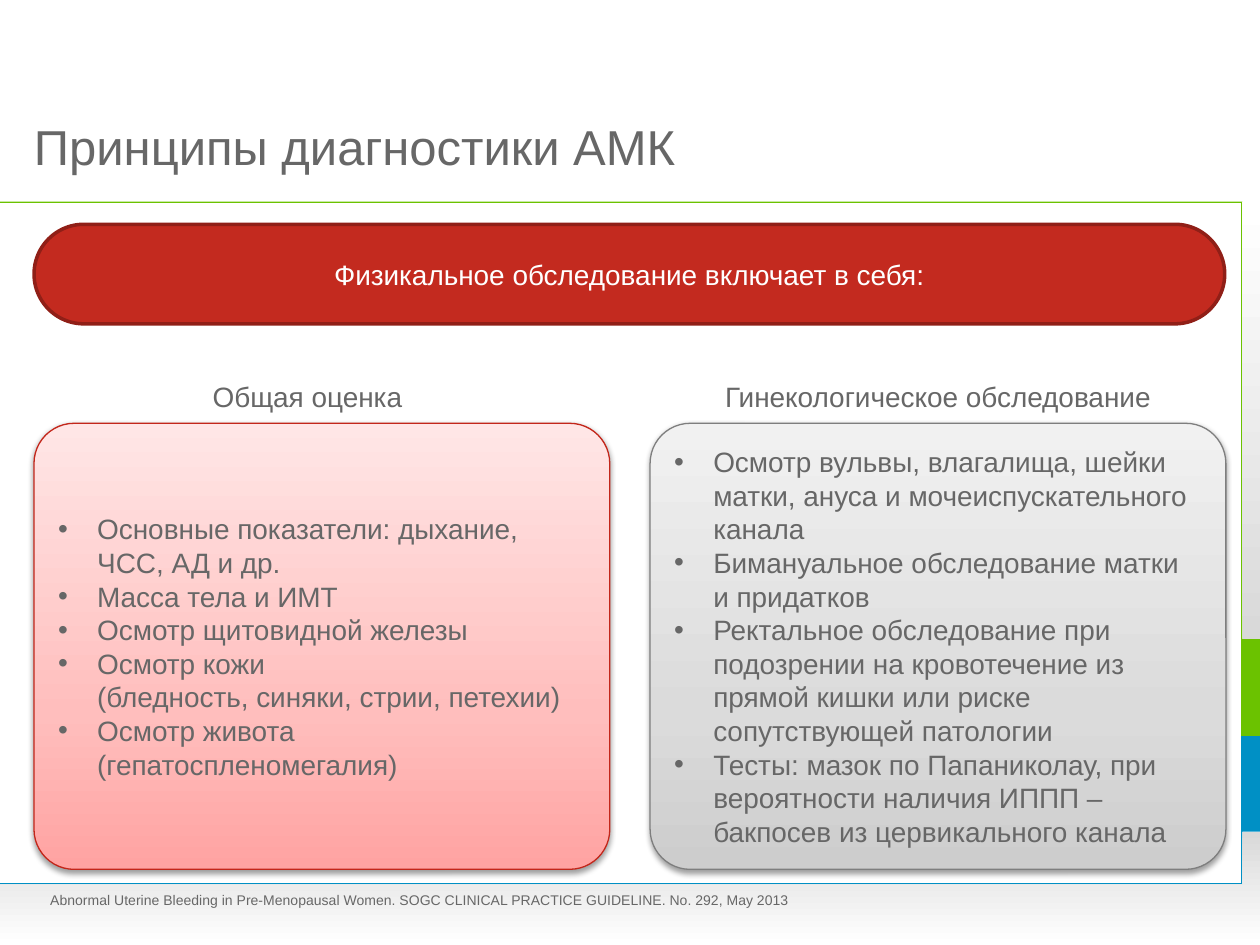
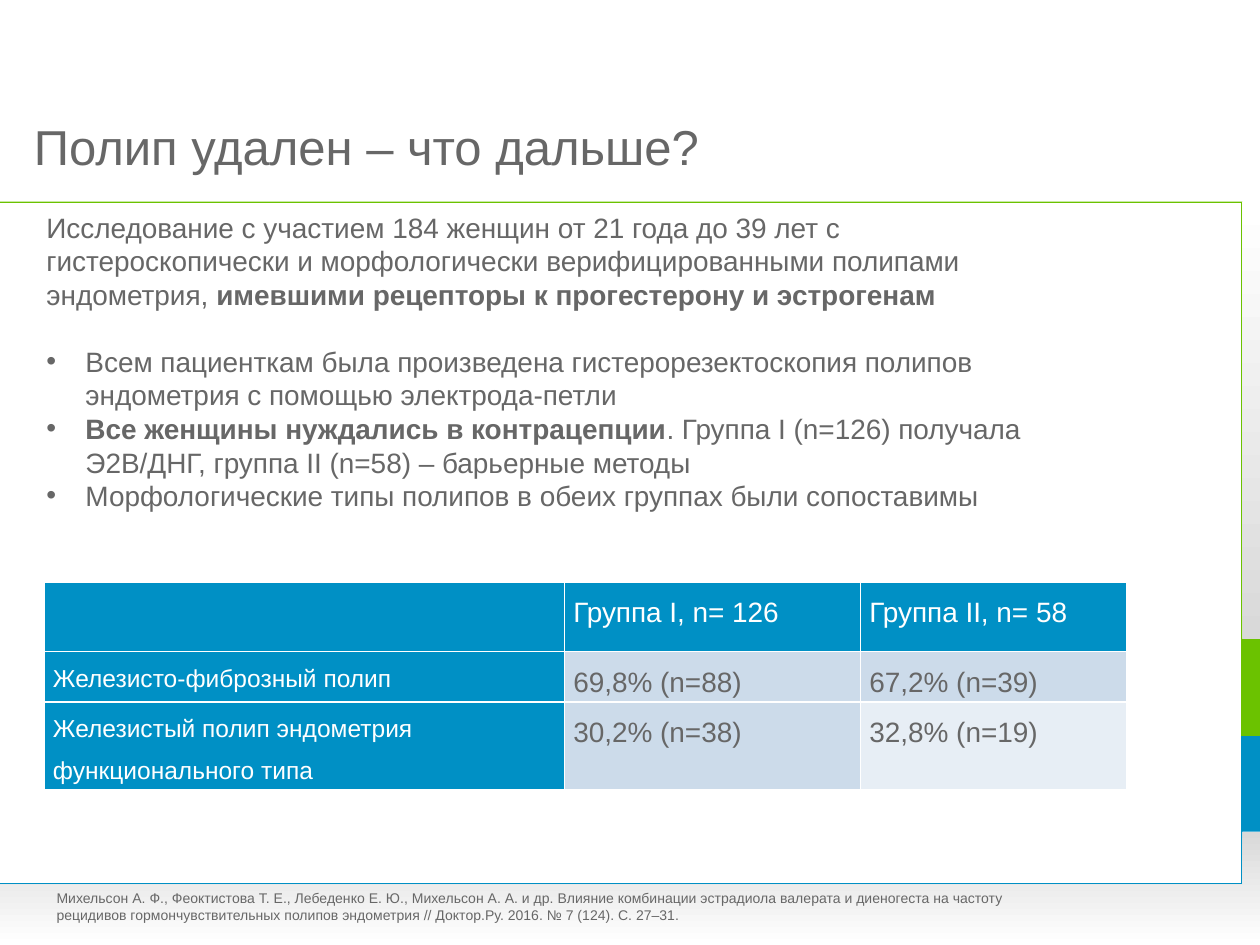
from lxml import etree
from pptx import Presentation
from pptx import util as u
from pptx.dml.color import RGBColor
from pptx.enum import shapes, text
from pptx.oxml import parse_xml
from pptx.oxml.ns import nsdecls, qn

# Content
FINDINGS = {
    "title": "Принципы диагностики АМК",
    "banner": "Физикальное обследование включает в себя:",
    "source": "Abnormal Uterine Bleeding in Pre-Menopausal Women. "
              "SOGC CLINICAL PRACTICE GUIDELINE. No. 292, May 2013",
    "cards": [
        {"caption": "Общая оценка", "caption_box": (67, 296, 354, 37),
         "fill": "red_card", "line": "red_edge", "corner": 0.09,
         "points": ["Основные показатели: дыхание, ЧСС, АД и др.",
                    "Масса тела и ИМТ",
                    "Осмотр щитовидной железы",
                    "Осмотр кожи\n(бледность, синяки, стрии, петехии)",
                    "Осмотр живота (гепатоспленомегалия)"]},
        {"caption": "Гинекологическое обследование", "caption_box": (524, 296, 441, 37),
         "fill": "gray_card", "line": "gray_edge", "corner": 0.09,
         "points": ["Осмотр вульвы, влагалища, шейки матки, ануса и мочеиспускательного канала",
                    "Бимануальное обследование матки и придатков",
                    "Ректальное обследование при подозрении на кровотечение из прямой кишки "
                    "или риске сопутствующей патологии",
                    "Тесты: мазок по Папаниколау, при вероятности наличия ИППП – "
                    "бакпосев из цервикального канала"]},
    ],
}
# Text between ** marks is bold
POLYP = {
    "title": "Полип удален – что дальше?",
    "intro": "Исследование с участием 184 женщин от 21 года до 39 лет с гистероскопически "
             "и морфологически верифицированными полипами эндометрия, "
             "**имевшими рецепторы к прогестерону и эстрогенам**",
    "points": ["Всем пациенткам была произведена гистерорезектоскопия полипов эндометрия "
               "с помощью электрода-петли",
               "**Все женщины нуждались в контрацепции**. Группа I (n=126) получала Э2В/ДНГ, "
               "группа II (n=58) – барьерные методы",
               "Морфологические типы полипов в обеих группах были сопоставимы"],
    "table": [["", "Группа I, n= 126", "Группа II, n= 58"],
              ["Железисто-фиброзный полип", "69,8% (n=88)", "67,2% (n=39)"],
              ["Железистый полип эндометрия функционального типа", "30,2% (n=38)", "32,8% (n=19)"]],
    "source": "Михельсон А. Ф., Феоктистова Т. Е., Лебеденко Е. Ю., Михельсон А. А. и др. "
              "Влияние комбинации эстрадиола валерата и диеногеста на частоту рецидивов "
              "гормончувствительных полипов эндометрия // Доктор.Ру. 2016. № 7 (124). С. 27–31.",
}

# Style
PX = 9144  # 100 px to the inch
FONT = "Arial"
COLORS = {"text": "676767", "white": "FFFFFF", "blue": "0090C5", "green": "6BC200",
          "banner": "C32A1F", "banner_edge": "901F17", "red_edge": "C3261A",
          "gray_edge": "7E7E7E", "cell": "CCDBEA", "cell_light": "E7EEF5"}
GRADIENTS = {"frame": [(0, "D9D9D9"), (100, "FFFFFF")],
             "red_card": [(0, "FFA3A2"), (35, "FFBEBD"), (100, "FFE6E6")],
             "gray_card": [(0, "CDCDCD"), (35, "DBDBDB"), (100, "F1F1F1")]}
INDENT = 31

# Slide frame: right edge strip and bottom band
BLUE_EDGE = [(1000, 583), (985, 583), (985, 701), (0, 701), (0, 702),
             (986, 702), (986, 660), (1000, 660)]
BOTTOM_BAND = [(1000, 750), (1000, 660), (986, 660), (986, 702), (0, 702), (0, 750)]
GREEN_EDGE = [(986, 507), (986, 160), (0, 160), (0, 161), (985, 161),
              (985, 584), (1000, 584), (1000, 507)]


def px(*values):
    return [v * PX for v in values]


def rgb(name):
    return RGBColor.from_string(COLORS[name])


def paint(sp, fill, line=None, width=0.75):
    sp.shadow.inherit = False
    sp.fill.solid()
    sp.fill.fore_color.rgb = rgb(fill)
    if line:
        sp.line.color.rgb = rgb(line)
        sp.line.width = u.Pt(width)
    else:
        sp.line.fill.background()


def paint_gradient(sp, name, angle):
    stops = "".join(f'<a:gs pos="{pos * 1000}"><a:srgbClr val="{c}"/></a:gs>'
                    for pos, c in GRADIENTS[name])
    grad = parse_xml(f'<a:gradFill {nsdecls("a")} rotWithShape="1"><a:gsLst>{stops}</a:gsLst>'
                     f'<a:lin ang="{angle * 60000}" scaled="0"/></a:gradFill>')
    props = sp._element.spPr
    props.replace(props.find(qn("a:solidFill")), grad)


def add_soft_shadow(sp):
    effects = sp._element.spPr.find(qn("a:effectLst"))
    effects.append(parse_xml(
        f'<a:outerShdw {nsdecls("a")} blurRad="{u.Pt(3.1)}" dist="{u.Pt(1.6)}" dir="5400000" '
        'rotWithShape="0"><a:srgbClr val="000000"><a:alpha val="38000"/></a:srgbClr></a:outerShdw>'))


def write(p, content, size=16, color="text", align=text.PP_ALIGN.LEFT, bullet=False):
    if bullet:
        props = p._p.get_or_add_pPr()
        props.set("marL", str(INDENT * PX))
        props.set("indent", str(-INDENT * PX))
        etree.SubElement(props, qn("a:buFont")).set("typeface", FONT)
        etree.SubElement(props, qn("a:buChar")).set("char", "•")
    p.alignment = align
    for i, part in enumerate(content.split("**")):
        for j, line in enumerate(part.split("\n")):
            if j:
                p.add_line_break()
            if line:
                r = p.add_run()
                r.text = line
                r.font.bold = i % 2 == 1
                r.font.name = FONT
                r.font.size = u.Pt(size)
                r.font.color.rgb = rgb(color)


def write_list(tf, items, **style):
    for i, item in enumerate(items):
        write(tf.add_paragraph() if i else tf.paragraphs[0], item, **style)


def add_text(slide, box, content, **style):
    tf = slide.shapes.add_textbox(*px(*box)).text_frame
    tf.word_wrap = True
    write(tf.paragraphs[0], content, **style)
    return tf


def add_outline(slide, points, fill):
    builder = slide.shapes.build_freeform(*points[0], scale=PX)
    builder.add_line_segments(points[1:], close=True)
    sp = builder.convert_to_shape()
    paint(sp, fill)
    return sp


def add_rounded(slide, box, corner, fill, line, width=0.75):
    sp = slide.shapes.add_shape(shapes.MSO_SHAPE.ROUNDED_RECTANGLE, *px(*box))
    sp.adjustments[0] = corner
    paint(sp, fill, line, width)
    sp.text_frame.word_wrap = True
    sp.text_frame.vertical_anchor = text.MSO_ANCHOR.MIDDLE
    return sp


def new_slide(prs, data, source_box):
    slide = prs.slides.add_slide(prs.slide_layouts[6])
    add_outline(slide, BLUE_EDGE, "blue")
    paint_gradient(add_outline(slide, BOTTOM_BAND, "white"), "frame", 90)
    add_outline(slide, GREEN_EDGE, "green")
    strip = slide.shapes.add_shape(shapes.MSO_SHAPE.RECTANGLE, *px(986, 160, 14, 347))
    paint(strip, "white")
    paint_gradient(strip, "frame", 270)
    tf = add_text(slide, (27, 35, 900, 104), data["title"], size=28)
    tf.margin_left = tf.margin_top = tf.margin_right = tf.margin_bottom = 0
    tf.vertical_anchor = text.MSO_ANCHOR.BOTTOM
    add_text(slide, source_box, data["source"], size=8)
    return slide


def add_findings(prs):
    slide = new_slide(prs, FINDINGS, (30, 703, 699, 24))
    center = text.PP_ALIGN.CENTER
    banner = add_rounded(slide, (27, 178, 945, 79), 0.5, "banner", "banner_edge", 2)
    write(banner.text_frame.paragraphs[0], FINDINGS["banner"], color="white", align=center)
    for i, card in enumerate(FINDINGS["cards"]):
        sp = add_rounded(slide, (27 + i * 489, 336, 457, 354), card["corner"],
                         "white", card["line"])
        paint_gradient(sp, card["fill"], 270)
        add_soft_shadow(sp)
        write_list(sp.text_frame, card["points"], bullet=True)
        add_text(slide, card["caption_box"], card["caption"], align=center)


def add_borders(cell):
    props = cell._tc.get_or_add_tcPr()
    for side in "LRTB":
        props.append(parse_xml(
            f'<a:ln{side} {nsdecls("a")} w="{u.Pt(1)}"><a:solidFill>'
            f'<a:srgbClr val="{COLORS["white"]}"/></a:solidFill></a:ln{side}>'))


def add_results(slide, rows):
    widths, heights = (413, 235, 211), (55, 40, 70)
    table = slide.shapes.add_table(len(rows), len(widths),
                                   *px(35, 462, sum(widths), sum(heights))).table
    table.first_row = table.horz_banding = False
    for column, width in zip(table.columns, widths):
        column.width = width * PX
    for i, row in enumerate(rows):
        table.rows[i].height = heights[i] * PX
        for j, value in enumerate(row):
            cell = table.cell(i, j)
            heading = i == 0 or j == 0
            last = i == len(rows) - 1 and j == len(row) - 1
            add_borders(cell)
            cell.fill.solid()
            cell.fill.fore_color.rgb = rgb(
                "blue" if heading else "cell_light" if last else "cell")
            cell.margin_left = cell.margin_right = 7 * PX
            cell.margin_top = cell.margin_bottom = 0
            p = cell.text_frame.paragraphs[0]
            p.line_spacing = 1.5
            write(p, value, size=16 if j or not i else 14,
                  color="white" if heading else "text")


def add_polyp(prs):
    slide = new_slide(prs, POLYP, (35, 701, 818, 37))
    tf = add_text(slide, (27, 162, 819, 252), POLYP["intro"])
    for i, point in enumerate(POLYP["points"]):
        p = tf.add_paragraph()
        write(p, point, bullet=True)
        if i == 0:
            p.space_before = u.Pt(19)
    add_results(slide, POLYP["table"])


def main():
    prs = Presentation()
    prs.slide_width, prs.slide_height = px(1000, 750)
    add_findings(prs)
    add_polyp(prs)
    prs.save("out.pptx")


if __name__ == "__main__":
    main()
